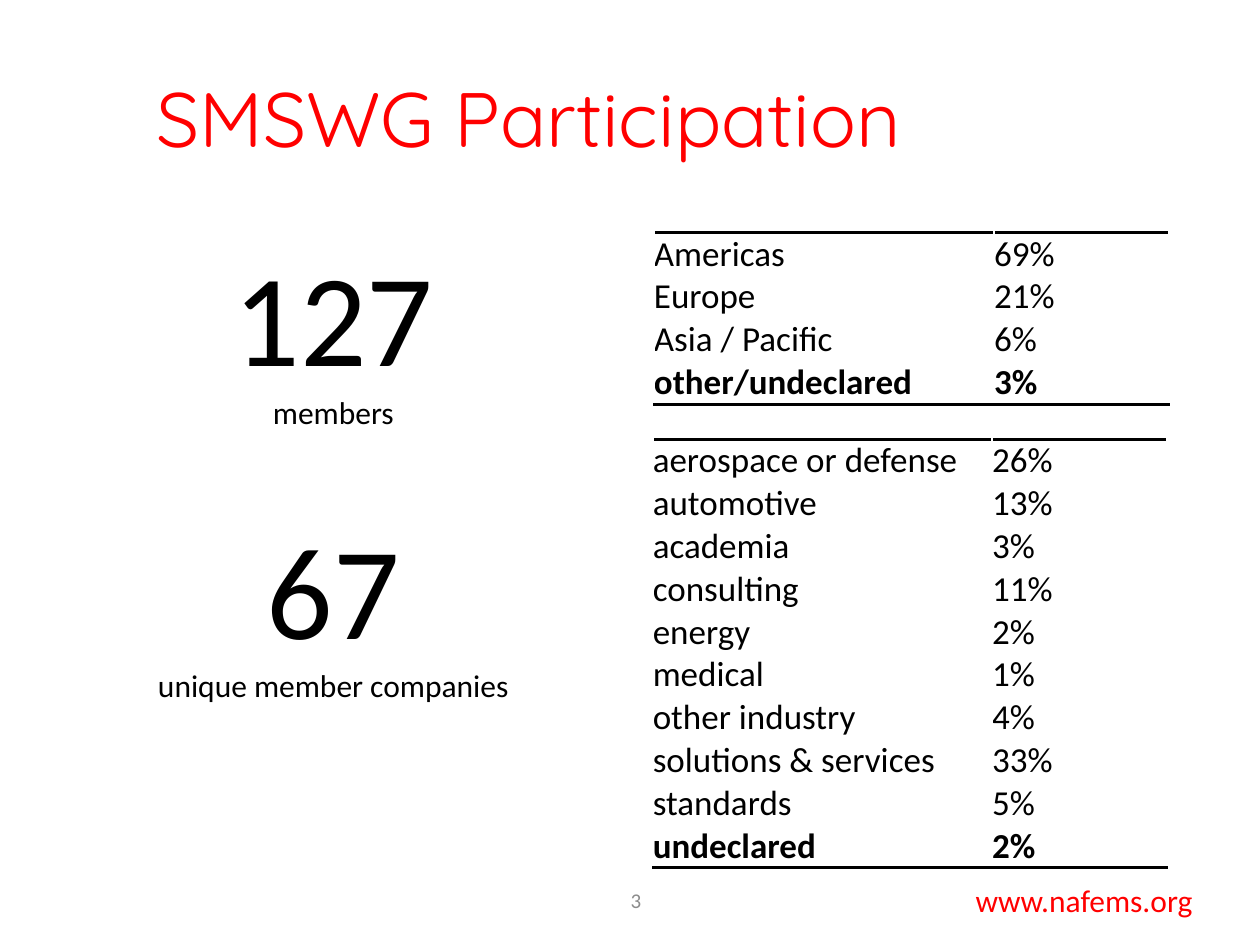
from lxml import etree
from pptx import Presentation
from pptx.dml.color import RGBColor
from pptx.enum.text import MSO_ANCHOR, PP_ALIGN
from pptx.oxml.ns import qn
from pptx.util import Pt

MIDDLE = MSO_ANCHOR.MIDDLE
TOP = MSO_ANCHOR.TOP
LEFT = PP_ALIGN.LEFT
CENTER = PP_ALIGN.CENTER
COLORS = {"accent": "FF0000", "text": "000000", "muted": "8C8C8C", "background": "FFFFFF"}
BODY_FONT = "Calibri"
TITLE_FONT = "Quicksand"
ROW_HEIGHT = 24.5

REGIONS = [
    ("Americas", "69%"),
    ("Europe", "21%"),
    ("Asia / Pacific", "6%"),
    ("other/undeclared", "3%"),
]
INDUSTRIES = [
    ("aerospace or defense", "26%"),
    ("automotive", "13%"),
    ("academia", "3%"),
    ("consulting", "11%"),
    ("energy", "2%"),
    ("medical", "1%"),
    ("other industry", "4%"),
    ("solutions & services", "33%"),
    ("standards", "5%"),
    ("undeclared", "2%"),
]


def to_points(box):
    """Turn a box of numbers into lengths in points."""
    return [Pt(length) for length in box]


def style_paragraph(paragraph, size, color="text", font=BODY_FONT, align=LEFT, bold=False):
    """Align a paragraph and format its runs."""
    paragraph.alignment = align
    for run in paragraph.runs:
        run.font.name = font
        run.font.size = Pt(size)
        run.font.bold = bold
        run.font.color.rgb = RGBColor.from_string(COLORS[color])


def add_title(slide, box, wording):
    """Place the title placeholder in its box."""
    title = slide.shapes.title
    title.left, title.top, title.width, title.height = to_points(box)
    title.text_frame.text = wording
    title.text_frame.vertical_anchor = MIDDLE
    style_paragraph(title.text_frame.paragraphs[0], 44, "accent", TITLE_FONT)


def add_centered_text(slide, box, lines, color="text", anchor=TOP):
    """Place centred lines, given as wording and size, in a text box."""
    frame = slide.shapes.add_textbox(*to_points(box)).text_frame
    frame.word_wrap = True
    frame.vertical_anchor = anchor
    frame.text = "\n".join(wording for wording, _ in lines)
    for paragraph, (_, size) in zip(frame.paragraphs, lines):
        style_paragraph(paragraph, size, color, align=CENTER)


def add_rule(cell, side):
    """Draw a black rule on one side of a table cell."""
    properties = cell._tc.get_or_add_tcPr()
    rule = etree.SubElement(properties, qn(f"a:{side}"), w=str(Pt(2)))
    fill = etree.SubElement(rule, qn("a:solidFill"))
    etree.SubElement(fill, qn("a:srgbClr"), val=COLORS["text"])


def add_share_table(slide, left, top, widths, shares):
    """Place a table of shares, ruled above and below, with a bold last row."""
    box = (left, top, sum(widths), ROW_HEIGHT * len(shares))
    table = slide.shapes.add_table(len(shares), len(widths), *to_points(box)).table
    table.first_row = False
    table.horz_banding = False
    for column, width in zip(table.columns, widths):
        column.width = Pt(width)
    last = len(shares) - 1
    for row, share in enumerate(shares):
        table.rows[row].height = Pt(ROW_HEIGHT)
        for column, wording in enumerate(share):
            cell = table.cell(row, column)
            cell.margin_left = cell.margin_right = cell.margin_top = cell.margin_bottom = 0
            cell.vertical_anchor = MIDDLE
            if row == 0:
                add_rule(cell, "lnT")
            if row == last:
                add_rule(cell, "lnB")
            cell.fill.solid()
            cell.fill.fore_color.rgb = RGBColor.from_string(COLORS["background"])
            cell.text_frame.text = wording
            style_paragraph(cell.text_frame.paragraphs[0], 20, bold=row == last)


def main():
    """Build the participation slide and save it."""
    deck = Presentation()
    deck.slide_width, deck.slide_height = Pt(720), Pt(540)
    slide = deck.slides.add_slide(deck.slide_layouts[5])
    add_centered_text(slide, (502, 500, 235, 28.8), [("www.nafems.org", 18)], "accent", MIDDLE)
    add_title(slide, (82, 21.6, 602, 90), "SMSWG Participation")
    add_centered_text(slide, (329, 500, 69, 28.8), [("3", 12)], "muted", MIDDLE)
    add_share_table(slide, 373.7, 133, (194.4, 100), REGIONS)
    add_share_table(slide, 373, 251, (194, 100), INDUSTRIES)
    add_centered_text(slide, (111, 131, 159, 120), [("127", 75), ("members", 18)])
    add_centered_text(slide, (82, 287, 217, 120), [("67", 75), ("unique member companies", 18)])
    deck.save("out.pptx")


if __name__ == "__main__":
    main()
